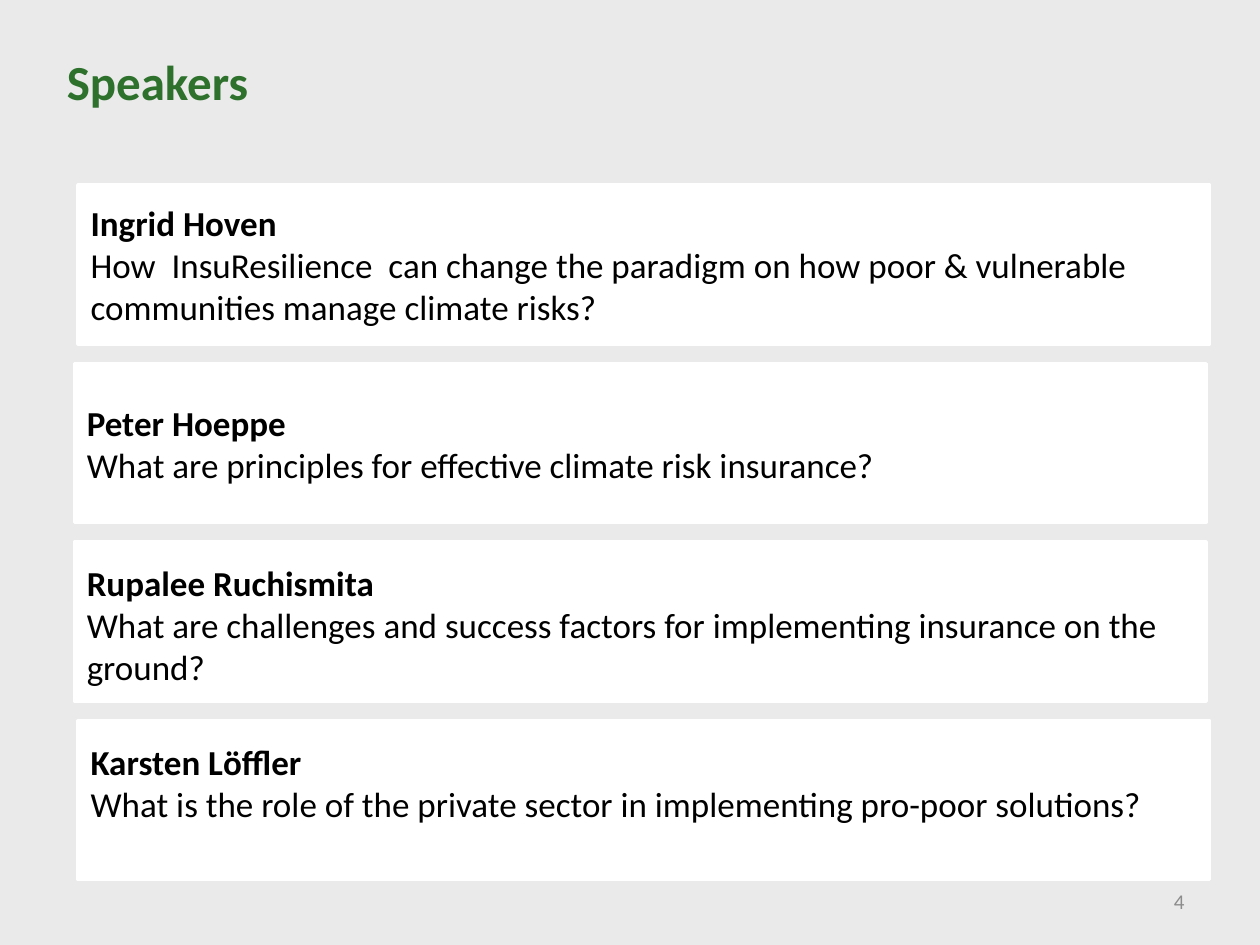
from pptx import Presentation, util as u
from pptx.dml.color import RGBColor
from pptx.enum import shapes, text

SPEAKERS = [
    ("Ingrid Hoven", "How  InsuResilience  can change the paradigm on how poor & "
     "vulnerable communities manage climate risks?", 0.62, 0.05, 0.05),
    ("Peter Hoeppe", "What are principles for effective climate risk insurance?",
     0.59, 0.05, 0.05),
    ("Rupalee Ruchismita", "What are challenges and success factors for implementing "
     "insurance on the ground?", 0.59, 0.09, 0.05),
    ("Karsten Löffler", "What is the role of the private sector in implementing "
     "pro-poor solutions?", 0.62, 0.05, 0.33),
]


def rgb(value):
    """Return the colour for a hex string."""
    return RGBColor.from_string(value)


def inches(*lengths):
    """Return the lengths as Inches."""
    return [u.Inches(length) for length in lengths]


def write(p, words, size, color, bold=False, align=text.PP_ALIGN.LEFT):
    """Fill a paragraph with text in one format."""
    p.text = words
    p.alignment = align
    p.font.name = "Calibri"
    p.font.size = u.Pt(size)
    p.font.bold = bold
    p.font.color.rgb = rgb(color)


def add_title(s, box, words):
    """Place the slide title in the box."""
    sp = s.shapes.title
    sp.left, sp.top, sp.width, sp.height = inches(*box)
    sp.text_frame.vertical_anchor = text.MSO_ANCHOR.MIDDLE
    write(sp.text_frame.paragraphs[0], words, 28, "2D712D", True)


def add_speaker(s, box, name, question, top_margin, bottom_margin):
    """Place a white card with a speaker and a question in the box."""
    sp = s.shapes.add_shape(shapes.MSO_SHAPE.RECTANGLE, *inches(*box))
    sp.shadow.inherit = False
    sp.fill.solid()
    sp.fill.fore_color.rgb = rgb("FFFFFF")
    sp.line.color.rgb = rgb("FFFFFF")
    sp.line.width = u.Pt(2)
    tf = sp.text_frame
    tf.word_wrap = True
    tf.vertical_anchor = text.MSO_ANCHOR.MIDDLE
    tf.margin_top, tf.margin_bottom = inches(top_margin, bottom_margin)
    write(tf.paragraphs[0], name, 20, "000000", True)
    write(tf.add_paragraph(), question, 20, "000000")


def add_page_number(s, box, number):
    """Place the page number at the right of the box."""
    tf = s.shapes.add_textbox(*inches(*box)).text_frame
    tf.word_wrap = True
    tf.vertical_anchor = text.MSO_ANCHOR.MIDDLE
    write(tf.paragraphs[0], number, 12, "8C8C8C", align=text.PP_ALIGN.RIGHT)


def main():
    """Build and save the speakers slide."""
    prs = Presentation()
    prs.slide_width, prs.slide_height = inches(10, 7.5)
    s = prs.slides.add_slide(prs.slide_layouts[5])
    s.background.fill.solid()
    s.background.fill.fore_color.rgb = rgb("EAEAEA")
    add_title(s, (0.43, 0.02, 9, 1.25), "Speakers")
    for i, (name, question, left, *margins) in enumerate(SPEAKERS):
        add_speaker(s, (left, 1.47 + 1.417 * i, 8.98, 1.26), name, question, *margins)
    add_page_number(s, (7.17, 6.95, 2.33, 0.4), "4")
    prs.save("out.pptx")


if __name__ == "__main__":
    main()
